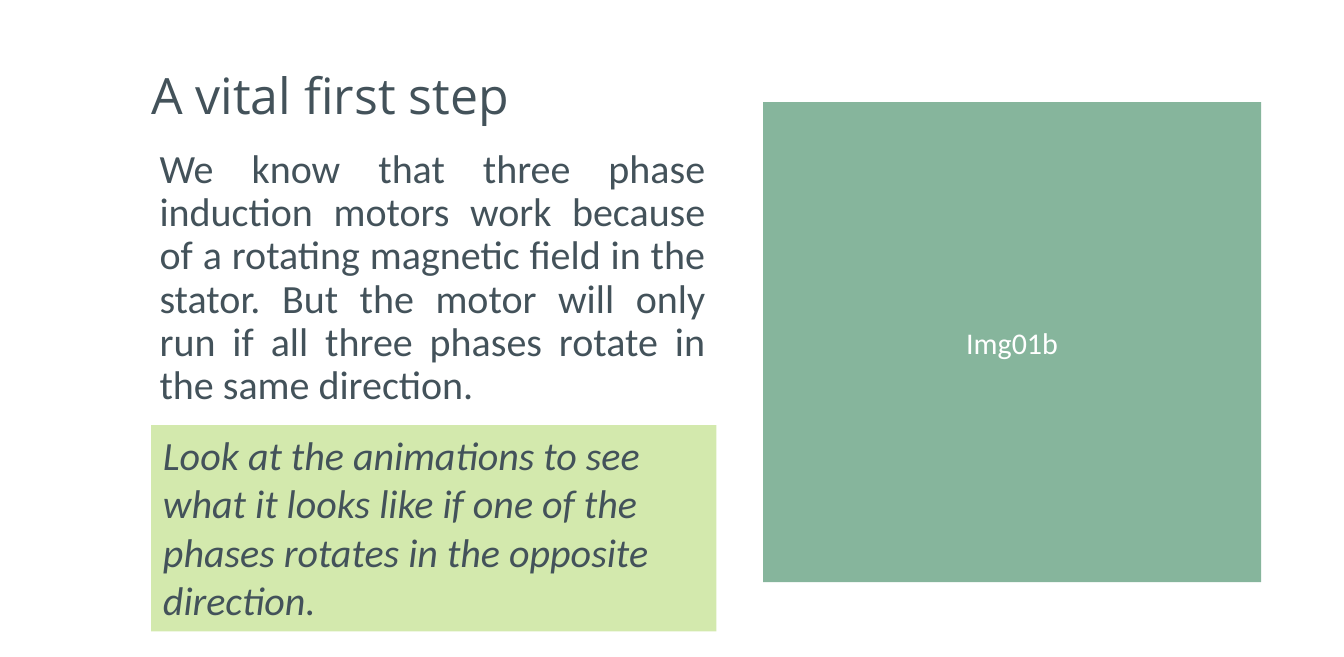
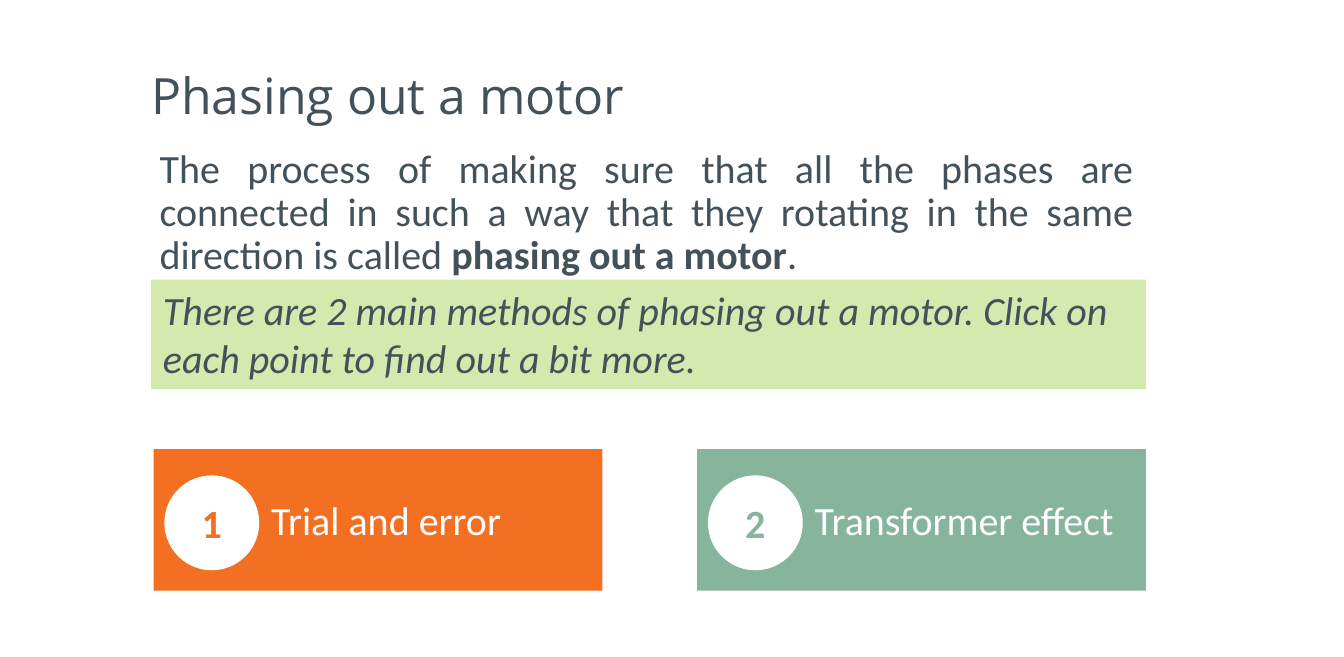
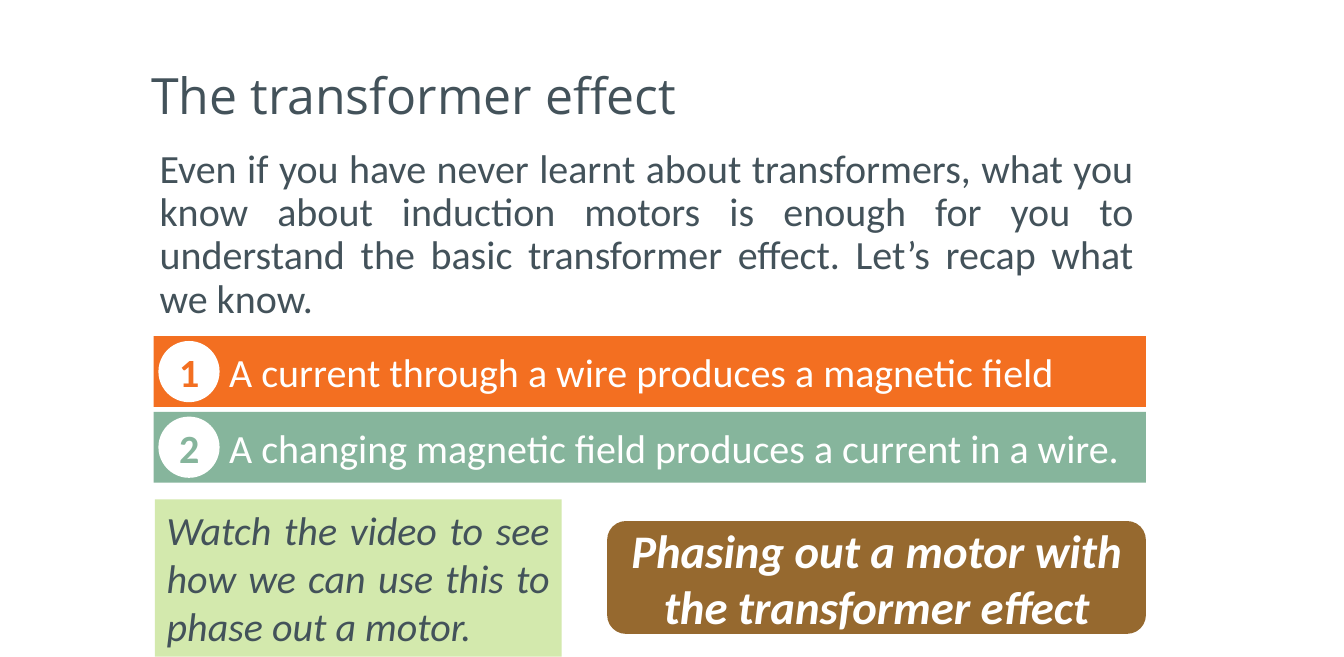
import dataclasses

import lxml.etree
import pptx
import pptx.dml.color
import pptx.enum.shapes
import pptx.enum.text
import pptx.oxml.ns
import pptx.util

Inches = pptx.util.Inches
Kind = pptx.enum.shapes.MSO_SHAPE
Align = pptx.enum.text.PP_ALIGN
Anchor = pptx.enum.text.MSO_ANCHOR
Fit = pptx.enum.text.MSO_AUTO_SIZE


@dataclasses.dataclass(frozen=True)
class Theme:
    ink: str = "43525A"
    white: str = "FFFFFF"
    green: str = "86B59C"
    lime: str = "D3E9AD"
    orange: str = "F36F21"
    brown: str = "96692F"
    head: str = "Open Sans"
    font: str = "Calibri"
    title: int = 30
    big: int = 28
    text: int = 24
    small: int = 18


THEME = Theme()
LEFT = 1.28
RIGHT = 9.55
WIDE = RIGHT - LEFT


def color(code):
    return pptx.dml.color.RGBColor.from_string(code)


def place(shape, box):
    shape.left, shape.top, shape.width, shape.height = map(Inches, box)


def write(para, text, ink=THEME.ink, size=THEME.text, font=THEME.font,
          bold=False, italic=False):
    run = para.add_run()
    run.text = text
    run.font.name = font
    run.font.size = pptx.util.Pt(size)
    run.font.color.rgb = color(ink)
    run.font.bold = bold
    run.font.italic = italic


def block(slide, box, fill, text, kind=Kind.RECTANGLE, align=Align.CENTER,
          anchor=Anchor.MIDDLE, inset=0.1, **style):
    """Add a filled shape with one run of text."""
    shape = slide.shapes.add_shape(kind, *map(Inches, box))
    shape.shadow.inherit = False
    shape.fill.solid()
    shape.fill.fore_color.rgb = color(fill)
    shape.line.fill.background()
    frame = shape.text_frame
    frame.word_wrap = True
    frame.vertical_anchor = anchor
    frame.margin_left = Inches(inset)
    para = frame.paragraphs[0]
    para.alignment = align
    write(para, text, **style)
    return shape


def note(slide, box, text, align=Align.LEFT):
    shape = block(slide, box, THEME.lime, text, align=align,
                  anchor=Anchor.TOP, italic=True)
    shape.text_frame.auto_size = Fit.SHAPE_TO_FIT_TEXT


def point(slide, box, disc, pad, inset, num, text, fill):
    """Add a bar with a numbered disc, set in by pad from its corner."""
    left, top = box[:2]
    block(slide, box, fill, text, align=Align.LEFT, inset=inset,
          ink=THEME.white)
    spot = (left + pad[0], top + pad[1], disc, disc)
    block(slide, spot, THEME.white, str(num), kind=Kind.OVAL, ink=fill,
          bold=True)


def points(slide, box, step, texts, **form):
    """Repeat a numbered bar, moved by step each time."""
    left, top, wide, high = box
    fills = (THEME.orange, THEME.green)
    for i, (text, fill) in enumerate(zip(texts, fills)):
        spot = (left + i * step[0], top + i * step[1], wide, high)
        point(slide, spot, num=i + 1, text=text, fill=fill, **form)


def page(deck, title, size, *parts):
    """Add a slide with its title and a body of (text, bold) parts."""
    slide = deck.slides.add_slide(deck.slide_layouts[1])
    head, body = slide.placeholders
    place(head, (1.16, 0.29, 8.39, 1.06))
    place(body, (1.23, 1.19, *size))
    for shape, anchor in ((head, Anchor.MIDDLE), (body, Anchor.TOP)):
        frame = shape.text_frame
        frame.word_wrap = True
        frame.auto_size = Fit.NONE
        frame.vertical_anchor = anchor
        frame.paragraphs[0].line_spacing = 0.9
    para = head.text_frame.paragraphs[0]
    para.alignment = Align.LEFT
    write(para, title, size=THEME.title, font=THEME.head)
    para = body.text_frame.paragraphs[0]
    para.alignment = Align.JUSTIFY
    para.space_before = pptx.util.Pt(7.3)
    props = para._p.get_or_add_pPr()
    props.set("marL", "0")
    props.set("indent", "0")
    lxml.etree.SubElement(props, pptx.oxml.ns.qn("a:buNone"))
    for text, bold in parts:
        write(para, text, bold=bold)
    return slide


def first(deck):
    slide = page(
        deck, "A vital first step", (4.75, 3.38),
        ("We know that three phase induction motors work because of a "
         "rotating magnetic field in the stator. But the motor will only "
         "run if all three phases rotate in the same direction.", False))
    block(slide, (6.36, 0.85, 4.15, 4), THEME.green, "Img01b",
          ink=THEME.white, size=THEME.small)
    note(slide, (1.26, 3.54, 4.71, 1.72),
         "Look at the animations to see what it looks like if one of the "
         "phases rotates in the opposite direction.")


def phasing(deck):
    slide = page(
        deck, "Phasing out a motor", (8.32, 1.23),
        ("The process of making sure that all the phases are connected in "
         "such a way that they rotating in the same direction is called ",
         False),
        ("phasing out a motor", True), (".", False))
    note(slide, (1.26, 2.33, 8.29, 0.91),
         "There are 2 main methods of phasing out a motor. Click on each "
         "point to find out a bit more.")
    wide = 3.74
    points(slide, (LEFT, 3.74, wide, 1.18), (WIDE - wide, 0),
           ("Trial and error", "Transformer effect"),
           disc=0.79, pad=(0.09, 0.22), inset=0.98)


def effect(deck):
    slide = page(
        deck, "The transformer effect", (8.32, 1.6),
        ("Even if you have never learnt about transformers, what you know "
         "about induction motors is enough for you to understand the basic "
         "transformer effect. Let’s recap what we know.", False))
    note(slide, (1.29, 4.16, 3.39, 1.31),
         "Watch the video to see how we can use this to phase out a motor.",
         align=Align.JUSTIFY)
    points(slide, (LEFT, 2.8, WIDE, 0.59), (0, 0.63),
           ("A current through a wire produces a magnetic field",
            "A changing magnetic field produces a current in a wire."),
           disc=0.51, pad=(0.04, 0.04), inset=0.63)
    wide = 4.49
    block(slide, (RIGHT - wide, 4.34, wide, 0.94), THEME.brown,
          "Phasing out a motor with the transformer effect",
          kind=Kind.ROUNDED_RECTANGLE, ink=THEME.white, size=THEME.big,
          bold=True, italic=True)


def main():
    deck = pptx.Presentation()
    deck.slide_width = pptx.util.Cm(28.45)
    deck.slide_height = pptx.util.Cm(13.9)
    deck.element.sldSz.attrib.pop("type", None)
    for build in (first, phasing, effect):
        build(deck)
    deck.save("out.pptx")


if __name__ == "__main__":
    main()
